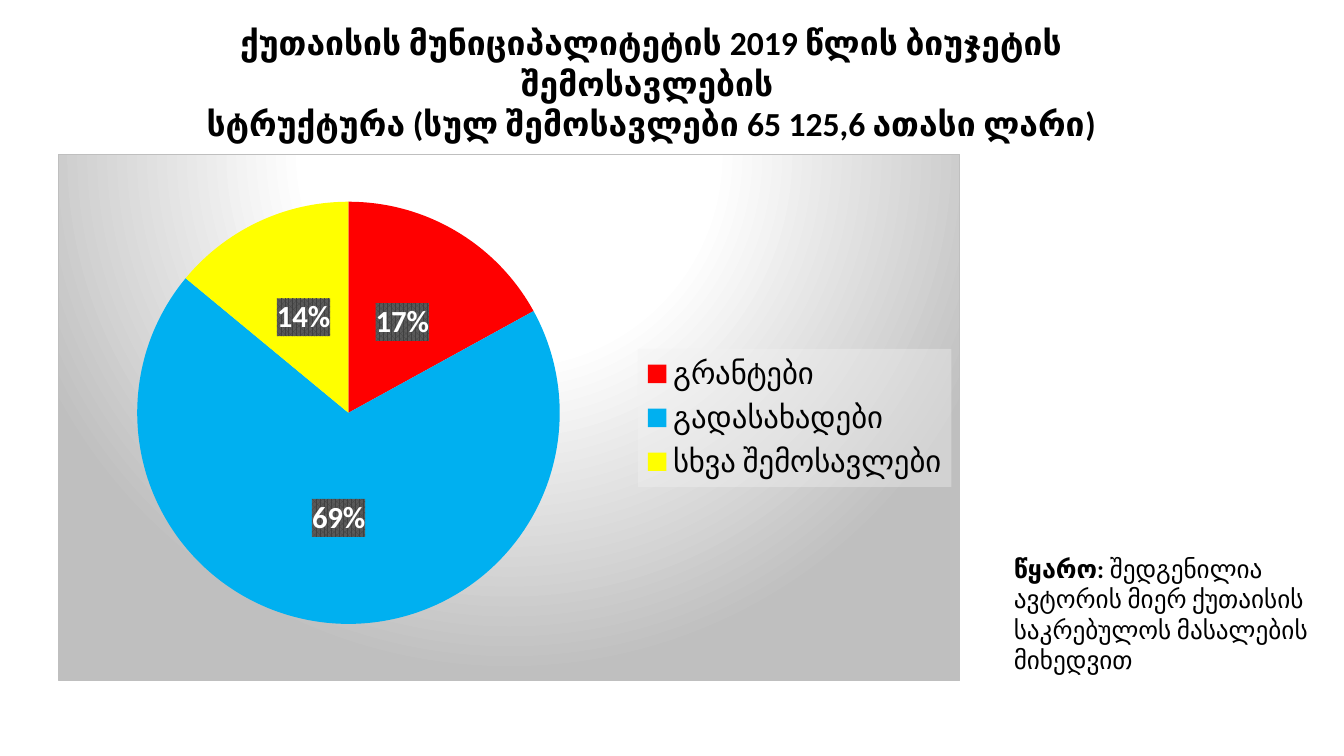
from pptx import Presentation
from pptx import util as u
from pptx.chart.data import CategoryChartData
from pptx.dml.color import RGBColor
from pptx.enum import chart as ch, text
from pptx.oxml import parse_xml
from pptx.oxml.ns import nsdecls, qn

FONT = "Calibri"
COLORS = {
    "text": "000000",
    "label": "FFFFFF",
    "გრანტები": "FF0000",
    "გადასახადები": "00B0F0",
    "სხვა შემოსავლები": "FFFF00",
    "centre": "FFFFFF",
    "edge": "BFBFBF",
    "legend": "F2F2F2",
    "label_fore": "404040",
    "label_back": "595959",
}
INCOME_SHARES = {"გრანტები": 17, "გადასახადები": 69, "სხვა შემოსავლები": 14}
PIE_AREA = {"x": 0.087, "y": 0.089, "w": 0.469, "h": 0.803}


def set_font(font, size, color="text", **values):
    for name, value in {"name": FONT, "size": u.Pt(size), **values}.items():
        setattr(font, name, value)
    font.color.rgb = RGBColor.from_string(COLORS[color])


def place(sp, left, top, width, height):
    for name, value in zip(("left", "top", "width", "height"),
                           (left, top, width, height)):
        setattr(sp, name, u.Cm(value))


def write(tf, paragraphs, size, align):
    """Fill a frame with paragraphs, each a list of (text, bold) runs."""
    frame = {"word_wrap": True, "vertical_anchor": text.MSO_ANCHOR.TOP,
             "auto_size": text.MSO_AUTO_SIZE.SHAPE_TO_FIT_TEXT}
    for name, value in frame.items():
        setattr(tf, name, value)
    for i, runs in enumerate(paragraphs):
        p = tf.add_paragraph() if i else tf.paragraphs[0]
        p.alignment = align
        for words, bold in runs:
            r = p.add_run()
            r.text = words
            set_font(r.font, size, bold=bold)


def rgb(name, inner=""):
    return f'<a:srgbClr val="{COLORS[name]}">{inner}</a:srgbClr>'


def sp_pr(content):
    return parse_xml(f'<c:spPr {nsdecls("c", "a")}>{content}</c:spPr>')


def style_background(chart):
    stops = "".join(f'<a:gs pos="{pos}">{rgb(name)}</a:gs>' for pos, name in
                    ((0, "centre"), (39000, "centre"), (100000, "edge")))
    chart.element.find(qn("c:chart")).addnext(sp_pr(
        f'<a:gradFill><a:gsLst>{stops}</a:gsLst><a:path path="circle">'
        '<a:fillToRect l="50000" t="-80000" r="50000" b="180000"/></a:path></a:gradFill>'
        f'<a:ln w="9525"><a:solidFill>{rgb("edge")}</a:solidFill></a:ln>'))


def style_legend(chart):
    chart.has_legend = True
    chart.legend.position = ch.XL_LEGEND_POSITION.RIGHT
    chart.legend.include_in_layout = False
    set_font(chart.legend.font, 22)
    legend = chart.element.find(".//" + qn("c:legend"))
    fill = rgb("legend", '<a:alpha val="39000"/>')
    legend.find(qn("c:txPr")).addprevious(
        sp_pr(f"<a:solidFill>{fill}</a:solidFill>"))


def style_labels(chart, series):
    labels = series.data_labels
    values = {"show_percentage": True, "show_value": False,
              "number_format": "0%", "number_format_is_linked": False,
              "position": ch.XL_LABEL_POSITION.CENTER}
    for name, value in values.items():
        setattr(labels, name, value)
    set_font(labels.font, 22, "label", bold=True)
    num_fmt = chart.element.find(".//" + qn("c:dLbls") + "/" + qn("c:numFmt"))
    num_fmt.addnext(sp_pr(
        f'<a:pattFill prst="pct75"><a:fgClr>{rgb("label_fore")}</a:fgClr>'
        f'<a:bgClr>{rgb("label_back")}</a:bgClr></a:pattFill>'))


def set_plot_layout(chart):
    plot_area = chart.element.find(".//" + qn("c:plotArea"))
    for old in plot_area.findall(qn("c:layout")):
        plot_area.remove(old)
    modes = "".join(f'<c:{k}Mode val="edge"/>' for k in "xy")
    sizes = "".join(f'<c:{k} val="{v}"/>' for k, v in PIE_AREA.items())
    plot_area.insert(0, parse_xml(
        f'<c:layout {nsdecls("c")}><c:manualLayout><c:layoutTarget val="inner"/>'
        f'{modes}{sizes}</c:manualLayout></c:layout>'))


def add_pie(s, shares, box):
    data = CategoryChartData(number_format="0")
    data.categories = list(shares)
    data.add_series("Series 1", list(shares.values()))
    chart = s.shapes.add_chart(ch.XL_CHART_TYPE.PIE, *map(u.Cm, box), data).chart
    chart.has_title = False
    style_background(chart)
    set_font(chart.font, 10)
    plot = chart.plots[0]
    plot.vary_by_categories = True
    series = plot.series[0]
    for i, name in enumerate(shares):
        form = series.points[i].format
        form.fill.solid()
        form.fill.fore_color.rgb = RGBColor.from_string(COLORS[name])
        form.line.fill.background()
    style_labels(chart, series)
    style_legend(chart)
    set_plot_layout(chart)


def main():
    prs = Presentation()
    prs.slide_width, prs.slide_height = u.Cm(33.87), u.Cm(19.05)
    s = prs.slides.add_slide(prs.slide_layouts[5])

    # Title
    title = s.shapes.title
    place(title, 3, 0.43, 26.82, 2.31)
    write(title.text_frame, [
        [("ქუთაისის მუნიციპალიტეტის 2019 წლის ბიუჯეტის შემოსავლების ", True)],
        [("სტრუქტურა (სულ შემოსავლები 65 125,6 ათასი ლარი)", True)],
    ], 24, text.PP_ALIGN.CENTER)

    # Source note
    note = s.shapes.add_textbox(*map(u.Cm, (25.3, 13.82, 8.26, 3.33)))
    write(note.text_frame, [[
        ("წყარო: ", True),
        ("შედგენილია ავტორის მიერ ქუთაისის საკრებულოს მასალების მიხედვით", False),
    ]], 18, text.PP_ALIGN.LEFT)

    # Income structure
    add_pie(s, INCOME_SHARES, (1.47, 3.89, 22.73, 13.28))
    prs.save("out.pptx")


if __name__ == "__main__":
    main()
